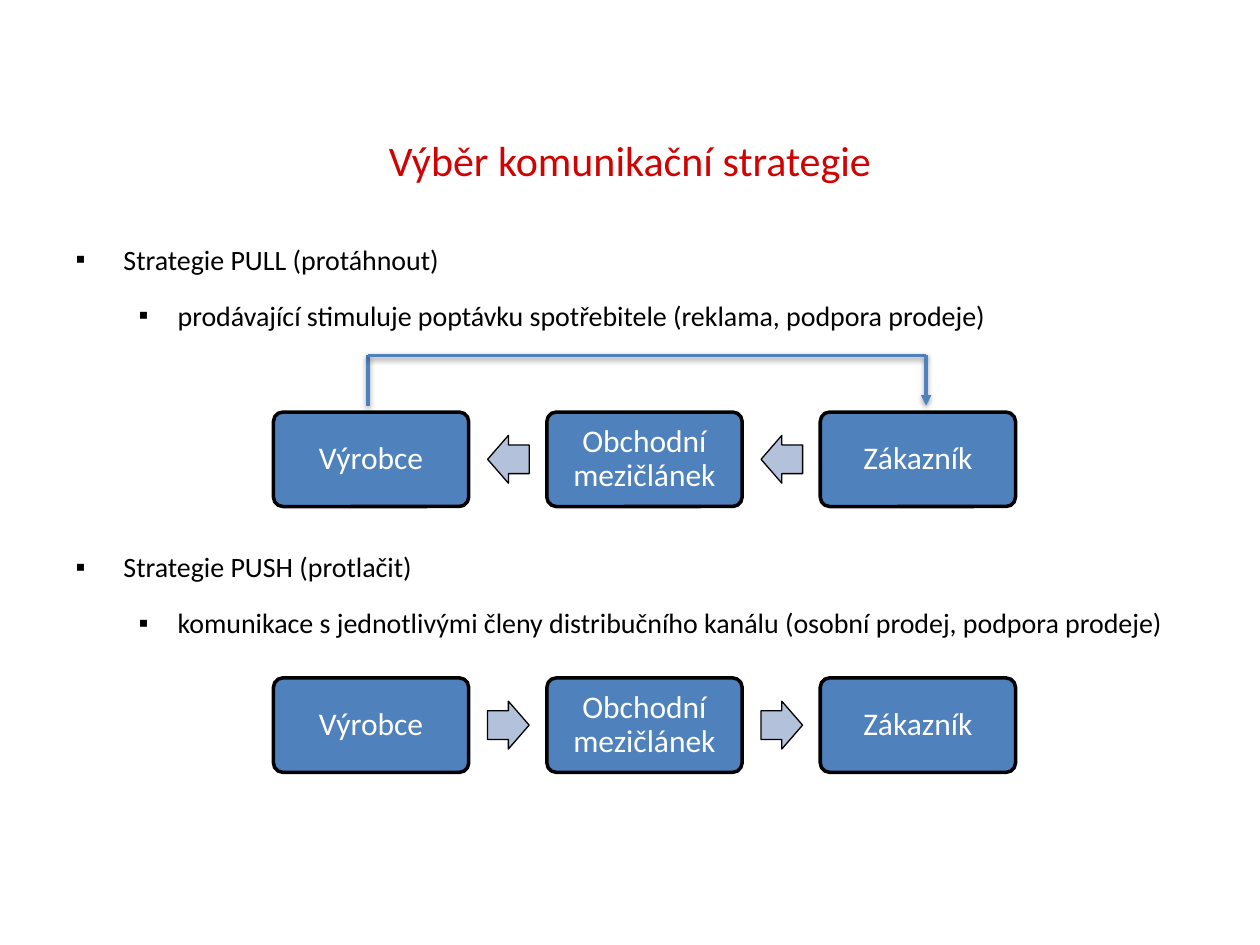
"""Builds a slide comparing the PULL and PUSH communication strategies."""
import lxml.etree
import pptx
import pptx.dml.color
import pptx.enum.shapes
import pptx.enum.text
import pptx.oxml.ns
import pptx.util

Inches = pptx.util.Inches
Pt = pptx.util.Pt
RGBColor = pptx.dml.color.RGBColor
Shape = pptx.enum.shapes.MSO_SHAPE
Align = pptx.enum.text.PP_ALIGN
Anchor = pptx.enum.text.MSO_ANCHOR

RED = RGBColor(0xD1, 0x02, 0x02)
BLUE = RGBColor(0x4F, 0x81, 0xBD)
PALE_BLUE = RGBColor(0xB3, 0xC1, 0xDB)
BLACK = RGBColor(0, 0, 0)
WHITE = RGBColor(0xFF, 0xFF, 0xFF)

MEMBERS = ["Výrobce", "Obchodní mezičlánek", "Zákazník"]
STRATEGIES = [
    (0, 0, "Strategie PULL (protáhnout)"),
    (1, 3.2, "prodávající stimuluje poptávku spotřebitele (reklama, podpora prodeje)"),
    (0, 115, "Strategie PUSH (protlačit)"),
    (1, 3.2, "komunikace s jednotlivými členy distribučního kanálu (osobní prodej, podpora prodeje)"),
]


def apply(target, values):
    for name, value in values.items():
        setattr(target, name, value)


class StrategySlide:
    font_name = "Calibri"
    indents = [(0.38, -0.38), (0.81, -0.31)]
    box_size = (1.55, 0.75)
    arrow_size = (0.33, 0.38)
    chain_left = 2.17
    chain_step = 2.17
    arrow_offset = 1.7

    def __init__(self, deck):
        self.slide = deck.slides.add_slide(deck.slide_layouts[1])

    def place(self, shape, left, top, width, height):
        apply(shape, {"left": Inches(left), "top": Inches(top),
                      "width": Inches(width), "height": Inches(height)})

    def add_text(self, para, text, size, color, **layout):
        span = para.add_run()
        span.text = text
        apply(para, layout)
        apply(span.font, {"name": self.font_name, "size": Pt(size)})
        span.font.color.rgb = color

    def title(self, text):
        box = self.slide.shapes.title
        self.place(box, 0.5, 0.87, 9, 0.8)
        box.text_frame.vertical_anchor = Anchor.MIDDLE
        self.add_text(box.text_frame.paragraphs[0], text, 24, RED, alignment=Align.CENTER)

    def bullets(self, items):
        box = self.slide.placeholders[1]
        self.place(box, 0.5, 1.74, 9, 4.95)
        frame = box.text_frame
        frame.auto_size = pptx.enum.text.MSO_AUTO_SIZE.NONE
        for index, (level, gap, text) in enumerate(items):
            para = frame.paragraphs[0] if index == 0 else frame.add_paragraph()
            self.bullet(para, *self.indents[level])
            self.add_text(para, text, 16, BLACK, level=level, line_spacing=1.5,
                          space_before=Pt(gap))

    def bullet(self, para, margin, indent):
        properties = para._p.get_or_add_pPr()
        properties.set("marL", str(Inches(margin)))
        properties.set("indent", str(Inches(indent)))
        for tag, key, value in [("a:buFont", "typeface", "Arial"), ("a:buChar", "char", "▪")]:
            element = lxml.etree.SubElement(properties, pptx.oxml.ns.qn(tag))
            element.set(key, value)

    def shape(self, kind, left, top, size, fill, line_width, adjustments):
        shape = self.slide.shapes.add_shape(
            kind, Inches(left), Inches(top), *map(Inches, size))
        shape.shadow.inherit = False
        shape.fill.solid()
        shape.fill.fore_color.rgb = fill
        shape.line.color.rgb = BLACK
        shape.line.width = Pt(line_width)
        for index, value in enumerate(adjustments):
            shape.adjustments[index] = value
        return shape

    def member(self, text, left, top):
        box = self.shape(Shape.ROUNDED_RECTANGLE, left, top, self.box_size, BLUE, 2, [0.1])
        margin = Inches(0.09)
        apply(box.text_frame, {
            "word_wrap": True, "vertical_anchor": Anchor.MIDDLE, "margin_left": margin,
            "margin_right": margin, "margin_top": margin, "margin_bottom": margin})
        self.add_text(box.text_frame.paragraphs[0], text, 18, WHITE,
                      alignment=Align.CENTER, line_spacing=0.9)

    def chain(self, top, rotation):
        arrow_top = top + (self.box_size[1] - self.arrow_size[1]) / 2
        for index, text in enumerate(MEMBERS):
            left = self.chain_left + index * self.chain_step
            self.member(text, left, top)
            if index < len(MEMBERS) - 1:
                arrow = self.shape(Shape.RIGHT_ARROW, left + self.arrow_offset, arrow_top,
                                   self.arrow_size, PALE_BLUE, 0.75, [0.6, 0.5])
                arrow.rotation = rotation

    def line(self, start, end, arrowhead=False):
        line = self.slide.shapes.add_connector(
            pptx.enum.shapes.MSO_CONNECTOR.STRAIGHT, *map(Inches, start + end))
        line.line.color.rgb = BLUE
        line.line.width = Pt(2)
        if arrowhead:
            tail = lxml.etree.SubElement(line.line._get_or_add_ln(),
                                         pptx.oxml.ns.qn("a:tailEnd"))
            tail.set("type", "triangle")

    def bracket(self, left, right, top, bottom):
        points = [(left, bottom), (left, top), (right, top), (right, bottom)]
        for index in range(3):
            self.line(points[index], points[index + 1], arrowhead=index == 2)


def main():
    deck = pptx.Presentation()
    apply(deck, {"slide_width": Inches(10), "slide_height": Inches(7.5)})
    page = StrategySlide(deck)
    page.title("Výběr komunikační strategie")
    page.bullets(STRATEGIES)
    page.chain(5.38, rotation=0)
    page.chain(3.27, rotation=180)
    page.bracket(left=2.92, right=7.35, top=2.82, bottom=3.22)
    deck.save("out.pptx")


if __name__ == "__main__":
    main()
